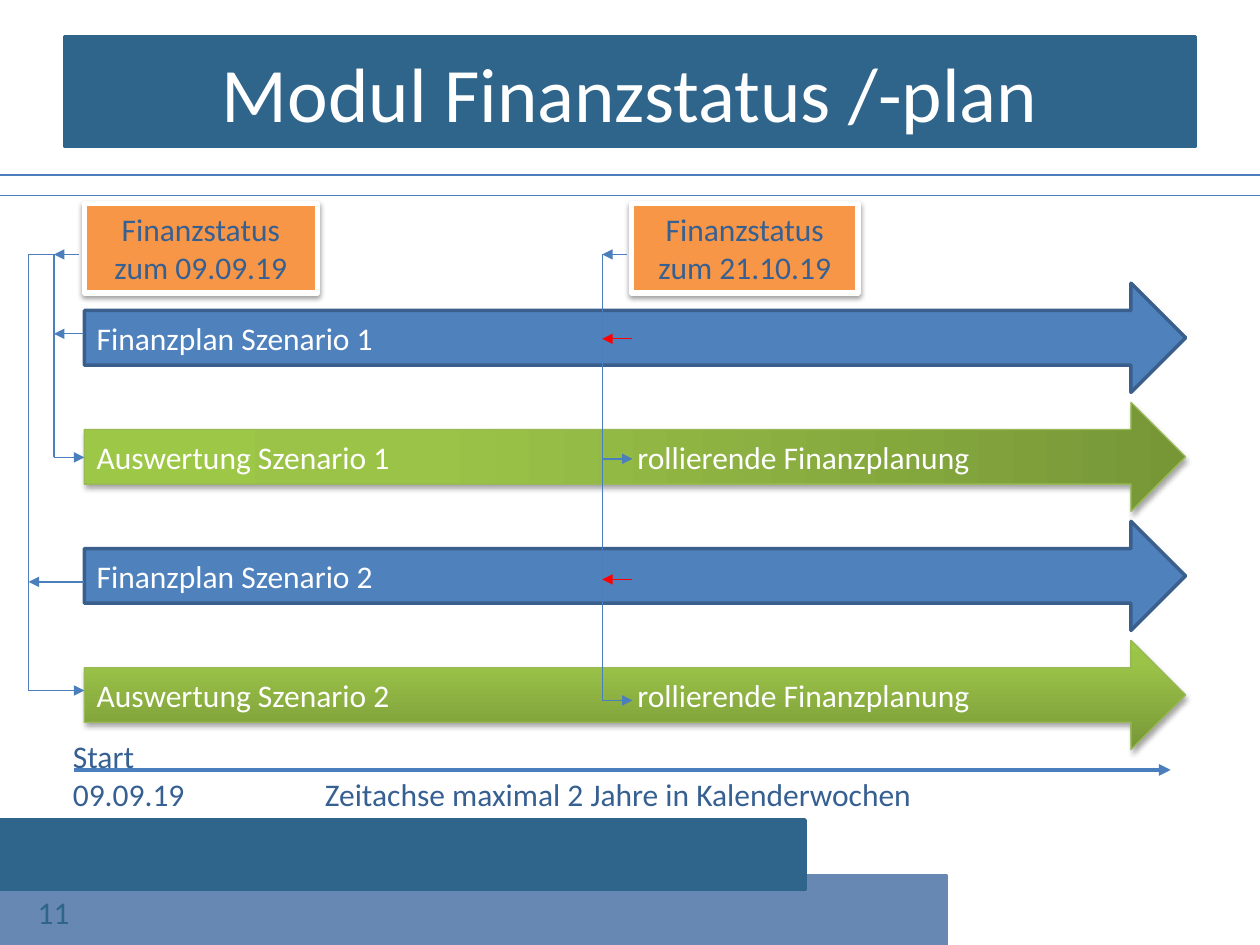
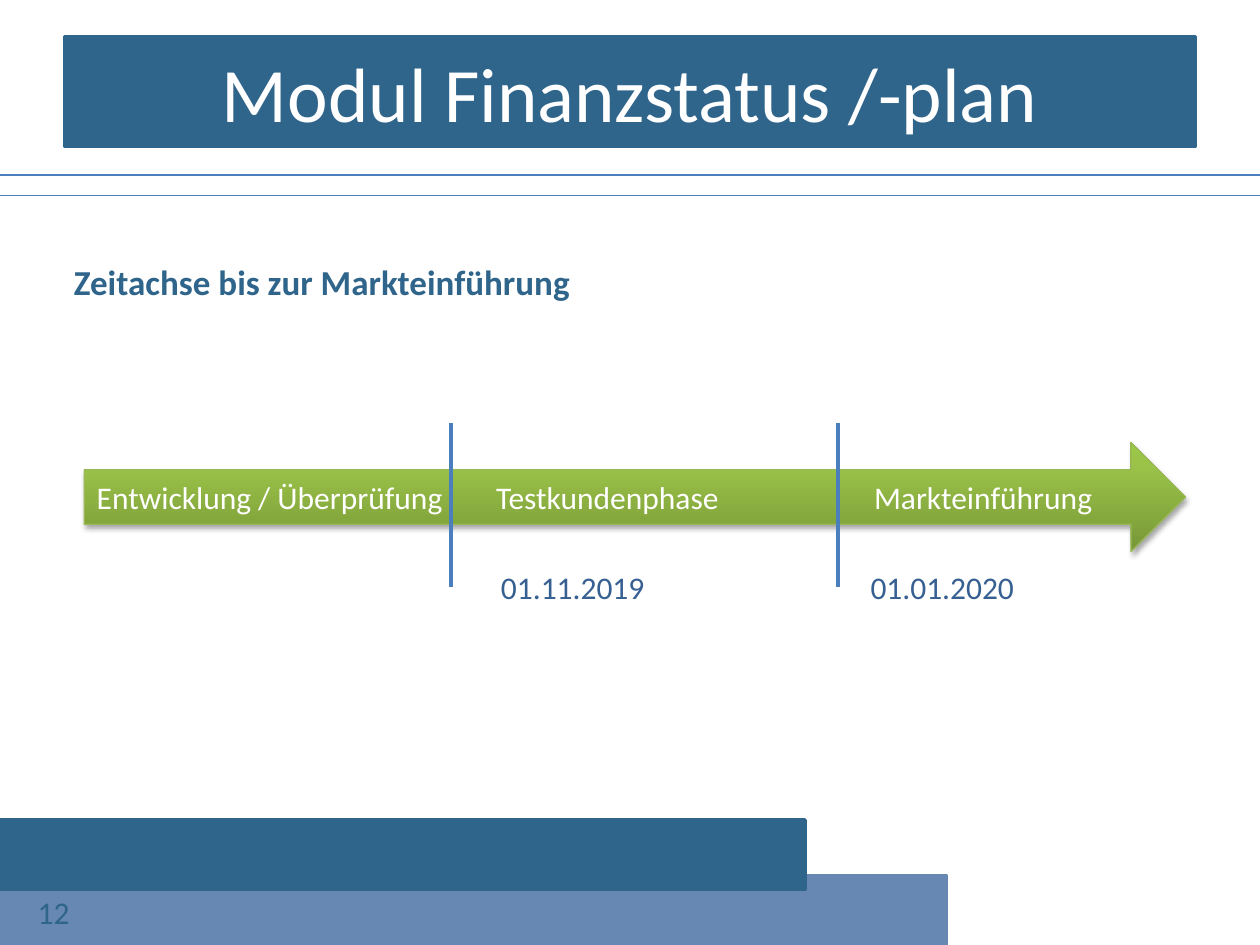
from dataclasses import dataclass
from typing import NamedTuple

from lxml import etree
from pptx import Presentation
from pptx.dml.color import RGBColor
from pptx.enum import shapes, text
from pptx.oxml.ns import qn
from pptx.util import Cm, Pt


@dataclass(frozen=True)
class Theme:
    font: str = "Calibri"
    white: str = "FFFFFF"
    band: str = "2F648B"
    band_light: str = "6688B2"
    label: str = "376092"
    rule: str = "4B7EBC"
    plan: str = "4F81BD"
    plan_line: str = "3A5F8C"
    review_line: str = "98B955"
    review_stops: tuple = ("779737", "9BC348", "9DC746")
    callout: str = "F79646"
    alert: str = "FF0000"
    title_size: int = 44
    heading_size: int = 20
    body_size: int = 18
    thin: float = 0.75
    thick: float = 2.25


THEME = Theme()
TITLE = "Modul Finanzstatus /-plan"
ARROW_HEIGHT = 2.2


class Box(NamedTuple):
    """Left, top, width and height in centimetres."""
    left: float
    top: float
    width: float
    height: float

    def inner(self, left, top, width, height):
        return Box(self.left + left, self.top + top, width, height)

    def lengths(self):
        return [Cm(value) for value in self]


def rgb(color):
    return RGBColor.from_string(color)


def add_element(parent, tag, **attributes):
    element = etree.SubElement(parent, qn(tag))
    for name, value in attributes.items():
        element.set(name, str(value))
    return element


def outline(shape, fill, line, width):
    shape.fill.solid()
    shape.fill.fore_color.rgb = rgb(fill)
    shape.line.color.rgb = rgb(line)
    shape.line.width = Pt(width)


def add_filled(slide, kind, box, fill, line, width):
    shape = slide.shapes.add_shape(kind, *box.lengths())
    outline(shape, fill, line, width)
    shape.shadow.inherit = False
    return shape


def set_shadow(shape, opacity, distance):
    effects = shape._element.spPr.find(qn("a:effectLst"))
    shadow = add_element(effects, "a:outerShdw", blurRad=Pt(3.1), dist=Pt(distance),
                         dir=90 * 60000, rotWithShape=0)
    color = add_element(shadow, "a:srgbClr", val="000000")
    add_element(color, "a:alpha", val=opacity * 1000)


def set_gradient(shape, middle, angle):
    """Fill from dark to light; angle runs clockwise in degrees."""
    shape.fill.gradient()
    gradient = shape._element.spPr.find(qn("a:gradFill"))
    for child in list(gradient):
        gradient.remove(child)
    stops = add_element(gradient, "a:gsLst")
    for position, color in zip((0, middle, 100), THEME.review_stops):
        stop = add_element(stops, "a:gs", pos=position * 1000)
        add_element(stop, "a:srgbClr", val=color)
    add_element(gradient, "a:lin", ang=angle * 60000, scaled=0)


def write(shape, lines, color, size=THEME.body_size, align=text.PP_ALIGN.LEFT,
          anchor=text.MSO_ANCHOR.TOP, wrap=True, bold=False, tabs=()):
    frame = shape.text_frame
    frame.word_wrap = wrap
    frame.vertical_anchor = anchor
    frame.text = "\n".join(lines)
    for paragraph in frame.paragraphs:
        paragraph.alignment = align
        if tabs:
            tab_list = add_element(paragraph._p.get_or_add_pPr(), "a:tabLst")
            for position in tabs:
                add_element(tab_list, "a:tab", pos=Cm(position), algn="l")
        font = paragraph.font
        font.name, font.size, font.bold = THEME.font, Pt(size), bold
        font.color.rgb = rgb(color)


def add_label(slide, box, content, color=THEME.label, **style):
    write(slide.shapes.add_textbox(*box.lengths()), [content], color, **style)


def add_line(slide, start, end, color=THEME.rule, width=THEME.thin, arrow=False):
    points = [Cm(value) for value in (*start, *end)]
    connector = slide.shapes.add_connector(shapes.MSO_CONNECTOR.STRAIGHT, *points)
    connector.line.color.rgb = rgb(color)
    connector.line.width = Pt(width)
    properties = connector._element.spPr
    if arrow:
        add_element(properties.find(qn("a:ln")), "a:tailEnd", type="triangle")
    add_element(properties, "a:effectLst")


def add_block_arrow(slide, box, labels, tabs=()):
    arrow = add_filled(slide, shapes.MSO_SHAPE.RIGHT_ARROW, box,
                       THEME.plan, THEME.plan_line, 2)
    write(arrow, ["\t".join(labels)], THEME.white, tabs=tabs,
          anchor=text.MSO_ANCHOR.MIDDLE)
    return arrow


def add_review_arrow(slide, box, labels, tabs, middle=80, angle=270):
    arrow = add_block_arrow(slide, box, labels, tabs)
    set_gradient(arrow, middle, angle)
    arrow.line.color.rgb = rgb(THEME.review_line)
    arrow.line.width = Pt(THEME.thin)
    set_shadow(arrow, 35, 1.8)


def add_callout(slide, box, date):
    callout = add_filled(slide, shapes.MSO_SHAPE.RECTANGLE, box,
                         THEME.callout, THEME.white, 3)
    set_shadow(callout, 38, 1.6)
    write(callout, ["Finanzstatus", f"zum {date}"], THEME.label,
          align=text.PP_ALIGN.CENTER)


def add_footer(slide, box, number):
    rectangle = shapes.MSO_SHAPE.RECTANGLE
    add_filled(slide, rectangle, box.inner(0, 1.12, 19.1, 1.4),
               THEME.band_light, THEME.band_light, 2)
    add_label(slide, box.inner(0.54, 1.35, 1.8, 0.94), str(number), THEME.band)
    add_filled(slide, rectangle, box.inner(0, 0, 16.26, 1.4), THEME.band, THEME.band, 2)


def add_base_slide(presentation, number):
    slide = presentation.slides.add_slide(presentation.slide_layouts[5])
    title = slide.shapes.title
    title.left, title.top, title.width, title.height = Box(1.3, 0.74, 22.8, 2.2).lengths()
    outline(title, THEME.band, THEME.band, 2)
    write(title, [TITLE], THEME.white, THEME.title_size,
          align=text.PP_ALIGN.CENTER, anchor=text.MSO_ANCHOR.MIDDLE)
    for height in (3.53, 3.94):
        add_line(slide, (0, height), (25.4, height))
    add_footer(slide, Box(-0.03, 16.53, 19.1, 2.52), number)
    return slide


def add_feedback(slide, box, spine, source, edge, plans, reviews,
                 plan_color=THEME.rule, source_arrow=True):
    """Link a status to its plans (arrows in) and reviews (arrows out) by a spine."""
    def link(start, end, **style):
        add_line(slide, *[(box.left + x, box.top + y) for x, y in (start, end)], **style)

    top = 1.02
    link((source, top), (spine, top), arrow=source_arrow)
    link((spine, top), (spine, max(reviews)))
    for height in plans:
        link((edge, height), (spine, height), color=plan_color, arrow=True)
    for height in reviews:
        link((spine, height), (edge, height), arrow=True)


def add_time_axis(slide, box):
    add_line(slide, (box.left, box.top + 0.79), (box.left + box.width, box.top + 0.79),
             width=THEME.thick, arrow=True)
    add_label(slide, box.inner(4.8, 0.76, 12.73, 1.02),
              "Zeitachse maximal 2 Jahre in Kalenderwochen", wrap=False)
    add_label(slide, box.inner(-0.28, 0, 2.9, 1.8), "Start 09.09.19")


def add_scenarios(slide, box):
    row_pitch = 2.4
    for scenario, (middle, angle) in enumerate(((69, 180), (80, 270)), start=1):
        plan_top = 1.6 + 2 * (scenario - 1) * row_pitch
        add_block_arrow(slide, box.inner(0, plan_top, box.width, ARROW_HEIGHT),
                        [f"Finanzplan Szenario {scenario}"])
        add_review_arrow(slide, box.inner(0, plan_top + row_pitch, box.width, ARROW_HEIGHT),
                         [f"Auswertung Szenario {scenario}", "rollierende Finanzplanung"],
                         [10.9], middle, angle)
    add_callout(slide, box.inner(0, 0, 4.7, 1.8), "09.09.19")
    add_callout(slide, box.inner(11.03, 0, 4.57, 1.8), "21.10.19")
    add_feedback(slide, box, -0.61, -0.1, 0, [2.62], [5.11])
    add_feedback(slide, box, -1.12, -0.61, 0, [7.62], [9.81], source_arrow=False)
    add_feedback(slide, box, 10.44, 10.95, 11.05, [2.72, 7.57], [5.14, 10.01],
                 plan_color=THEME.alert)
    add_time_axis(slide, box.inner(-0.2, 10.62, 22.1, 1.8))


def add_launch_phases(slide, box):
    add_label(slide, box.inner(-0.46, 0, 14, 1.1), "Zeitachse bis zur Markteinführung",
              THEME.band, size=THEME.heading_size, bold=True)
    add_review_arrow(slide, box.inner(0, 3.79, box.width, ARROW_HEIGHT),
                     ["Entwicklung / Überprüfung", "Testkundenphase", "Markteinführung"],
                     [8.05, 15.67])
    for milestone, label_left, date in ((7.39, 8.15, "01.11.2019"),
                                        (15.19, 15.6, "01.01.2020")):
        x = box.left + milestone
        add_line(slide, (x, box.top + 3.4), (x, box.top + 6.71), width=THEME.thick)
        add_label(slide, box.inner(label_left, 6.19, 3.6, 1.02), date)


def main():
    presentation = Presentation()
    presentation.slide_width, presentation.slide_height = Cm(25.4), Cm(19.05)
    add_scenarios(add_base_slide(presentation, 11), Box(1.7, 4.11, 22.2, 12.4))
    add_launch_phases(add_base_slide(presentation, 12), Box(1.7, 5.13, 22.2, 7.2))
    presentation.save("out.pptx")


if __name__ == "__main__":
    main()
